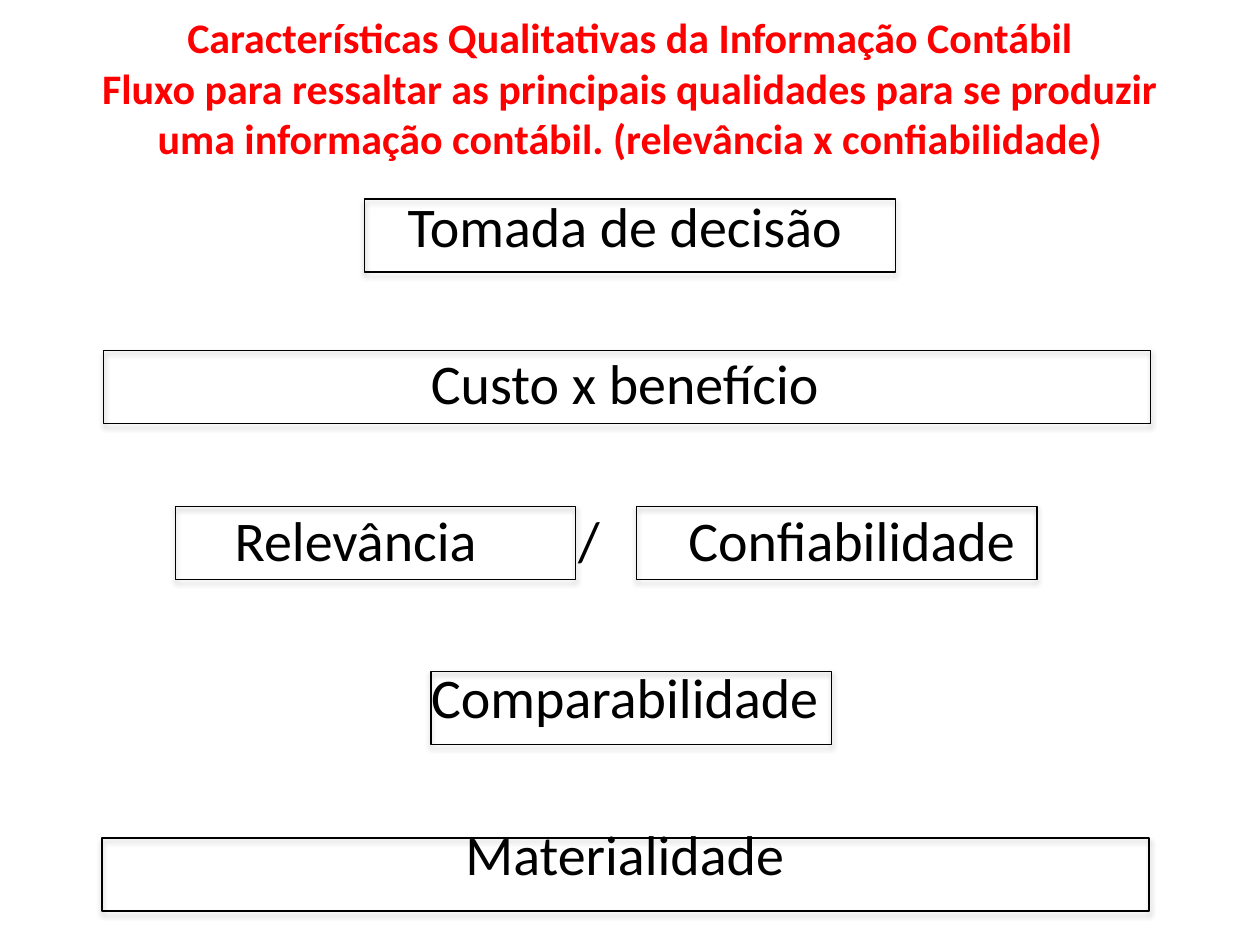
from pptx import Presentation
from pptx import util as u
from pptx.dml.color import RGBColor
from pptx.enum import shapes, text
from pptx.oxml.ns import qn
from lxml import etree

ALIGN = text.PP_ALIGN


def color(hex_code):
    return RGBColor.from_string(hex_code)


def add_xml(parent, tag, **attributes):
    values = {name: str(value) for name, value in attributes.items()}
    return etree.SubElement(parent, qn(tag), values)


def write(paragraph, pieces, size, ink, bold=False, before=0):
    """Fill a centred paragraph with (words, letter spacing in points) pieces."""
    properties = paragraph._p.get_or_add_pPr()
    properties.set("marL", "0")
    properties.set("indent", "0")
    add_xml(properties, "a:buNone")
    paragraph.alignment = ALIGN.CENTER
    paragraph.space_before = u.Pt(before)
    for words, spacing in pieces:
        if words == "\n":
            paragraph.add_line_break()
            continue
        run = paragraph.add_run()
        run.text = words
        run.font.name = "Calibri"
        run.font.size = u.Pt(size)
        run.font.bold = bold
        run.font.color.rgb = color(ink)
        if spacing:
            run._r.get_or_add_rPr().set("spc", str(round(spacing * 100)))


class QualityFlow:
    """Style and slide; every box is left, top, width, height in percent."""
    heading, ink = "FF0000", "000000"
    title_size, body_size, step_gap = 24, 32, 51.3

    def __init__(self, deck):
        self.deck = deck
        self.slide = deck.slides.add_slide(deck.slide_layouts[1])

    def area(self, left, top, width, height):
        across, down = self.deck.slide_width / 100, self.deck.slide_height / 100
        return [round(v) for v in
                (left * across, top * down, width * across, height * down)]

    def place(self, holder, box, anchor):
        holder.left, holder.top, holder.width, holder.height = self.area(*box)
        frame = holder.text_frame
        frame.word_wrap = True
        frame.auto_size = text.MSO_AUTO_SIZE.NONE
        frame.vertical_anchor = anchor
        return frame

    def title(self, pieces, box):
        frame = self.place(self.slide.shapes.title, box, text.MSO_ANCHOR.MIDDLE)
        write(frame.paragraphs[0], pieces, self.title_size, self.heading, bold=True)

    def steps(self, entries, box):
        frame = self.place(self.slide.placeholders[1], box, text.MSO_ANCHOR.TOP)
        for number, pieces in enumerate(entries):
            paragraph = frame.add_paragraph() if number else frame.paragraphs[0]
            write(paragraph, pieces, self.body_size, self.ink,
                  before=self.step_gap if number else 0)

    def outline(self, *box):
        frame = self.slide.shapes.add_shape(
            shapes.MSO_SHAPE.RECTANGLE, *self.area(*box))
        frame.fill.background()
        frame.line.color.rgb = color(self.ink)
        frame.line.width = u.Pt(0.75)
        frame.shadow.inherit = False
        effects = frame._element.spPr.find(qn("a:effectLst"))
        shadow = add_xml(effects, "a:outerShdw", blurRad=u.Pt(3.1),
                         dist=u.Pt(1.8), dir=90 * 60000, rotWithShape=0)
        tint = add_xml(shadow, "a:srgbClr", val=self.ink)
        add_xml(tint, "a:alpha", val=35000)


def main():
    deck = Presentation()
    deck.slide_width, deck.slide_height = u.Inches(10), u.Inches(7.5)
    flow = QualityFlow(deck)
    flow.title([("Características Qualitativas da Informação Contábil", 0),
                ("\n", 0),
                ("Fluxo para ressaltar as principais qualidades para se produzir "
                 "uma informação contábil. (relevância x confiabilidade)", 0)],
               (5, 0.53, 90, 17.47))
    flow.steps([[("Tomada de decisão", 0)],
                [("Custo x benefício", 0)],
                [("Relevância", 0), (" ", 50.6), ("/", 0), (" ", 43.4),
                 ("Confiabilidade", 0)],
                [("Comparabilidade", 0)],
                [("Materialidade", 0)]], (4.6, 19.6, 90, 78.4))

    wide, half, height = 83.1, 31.8, 7.73
    for left, top, width in ((8.1, 88.67, wide), (34.2, 71.07, half),
                             (13.9, 53.6, half), (50.5, 53.6, half),
                             (8.2, 37.07, wide), (28.9, 21.07, 42.2)):
        flow.outline(left, top, width, height)
    deck.save("out.pptx")


if __name__ == "__main__":
    main()
